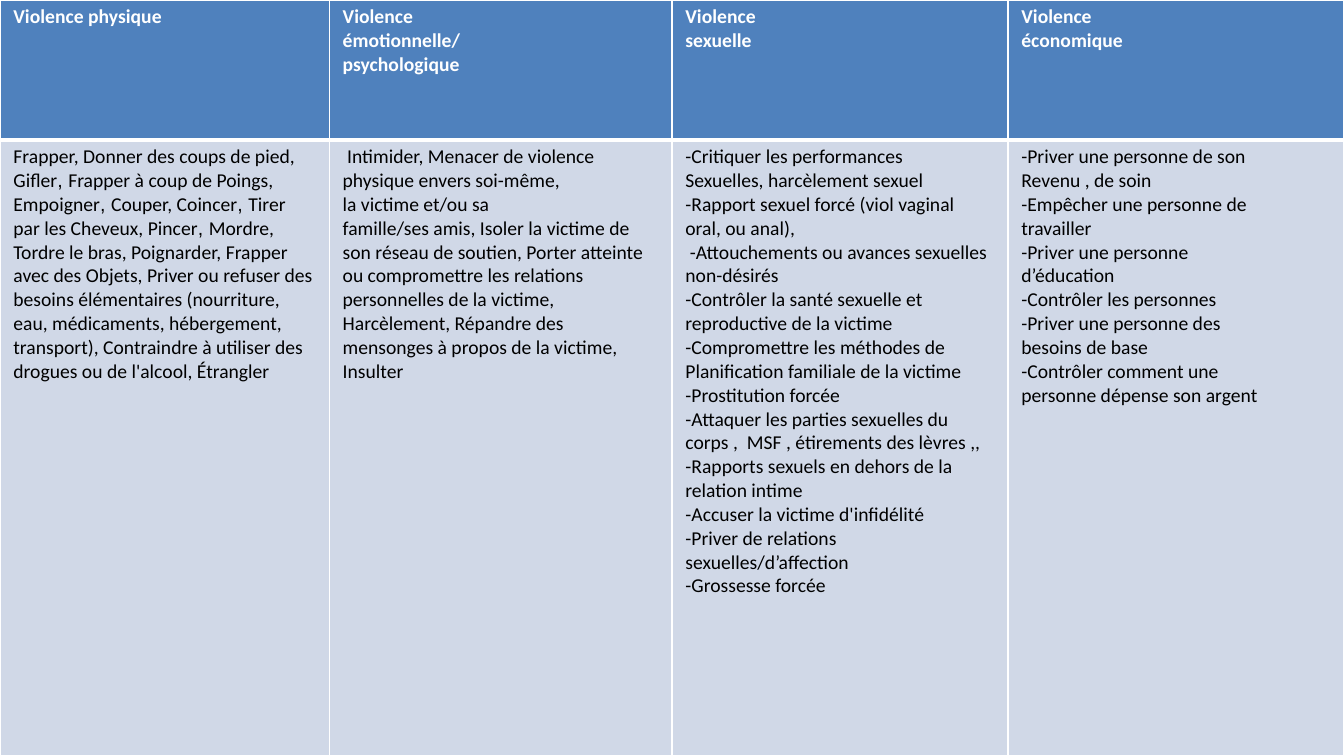
from lxml.etree import SubElement
from pptx import Presentation
from pptx.dml.color import RGBColor
from pptx.oxml.ns import qn
from pptx.util import Pt

HEADER_BLUE = RGBColor(0x4F, 0x81, 0xBD)
BODY_BLUE = RGBColor(0xD0, 0xD8, 0xE7)
WHITE = RGBColor(0xFF, 0xFF, 0xFF)
BLACK = RGBColor(0x00, 0x00, 0x00)

HEADERS = [
    ["Violence physique"],
    ["Violence", "émotionnelle/", "psychologique"],
    ["Violence", "sexuelle"],
    ["Violence", "économique"],
]
PHYSICAL = [
    (
        "Frapper, Donner des coups de pied, Gifler",
        "Frapper à coup de Poings, Empoigner",
        "Couper, Coincer",
        "Tirer par les Cheveux, Pincer",
        "Mordre, Tordre le bras, Poignarder, Frapper avec des Objets, "
        "Priver ou refuser des besoins élémentaires (nourriture, eau, "
        "médicaments, hébergement, transport), Contraindre à utiliser des",
    ),
    "drogues ou de l'alcool, Étrangler",
]
EMOTIONAL = [
    " Intimider, Menacer de violence",
    "physique envers soi-même,",
    "la victime et/ou sa",
    "famille/ses amis, Isoler la victime de son réseau de soutien, Porter "
    "atteinte ou compromettre les relations personnelles de la victime, "
    "Harcèlement, Répandre des mensonges à propos de la victime, Insulter",
]
SEXUAL = [
    "-Critiquer les performances",
    "Sexuelles, harcèlement sexuel",
    "-Rapport sexuel forcé (viol vaginal oral, ou anal),",
    " -Attouchements ou avances sexuelles non-désirés",
    "-Contrôler la santé sexuelle et",
    "reproductive de la victime",
    "-Compromettre les méthodes de",
    "Planification familiale de la victime",
    "-Prostitution forcée",
    "-Attaquer les parties sexuelles du corps ,  MSF , étirements des lèvres ,,",
    "-Rapports sexuels en dehors de la",
    "relation intime",
    "-Accuser la victime d'infidélité",
    "-Priver de relations sexuelles/d’affection",
    "-Grossesse forcée",
]
ECONOMIC = [
    "-Priver une personne de son",
    "Revenu , de soin",
    "-Empêcher une personne de",
    "travailler",
    "-Priver une personne",
    "d’éducation",
    "-Contrôler les personnes",
    "-Priver une personne des",
    "besoins de base",
    "-Contrôler comment une",
    "personne dépense son argent",
]
THIN, THICK = 0.96, 3
ROWS = [
    (HEADERS, 100, dict(fill=HEADER_BLUE, color=WHITE, bold=True, top=THIN, bottom=THICK)),
    ([PHYSICAL, EMOTIONAL, SEXUAL, ECONOMIC], 440,
     dict(fill=BODY_BLUE, color=BLACK, bold=False, top=THICK, bottom=THIN)),
]
COLUMN_WIDTHS = [235.2, 244.8, 240, 240]


def add_run(paragraph, text, font_name, color, bold):
    run = paragraph.add_run()
    run.text = text
    run.font.name = font_name
    run.font.size = Pt(14)
    run.font.bold = bold
    run.font.color.rgb = color


def set_borders(cell, top, bottom):
    properties = cell._tc.get_or_add_tcPr()
    widths = {"a:lnL": THIN, "a:lnR": THIN, "a:lnT": top, "a:lnB": bottom}
    for tag, width in widths.items():
        line = SubElement(properties, qn(tag), w=str(Pt(width)))
        fill = SubElement(line, qn("a:solidFill"))
        SubElement(fill, qn("a:srgbClr"), val=str(WHITE))


def write_cell(cell, text, fill, color, bold, top, bottom):
    set_borders(cell, top, bottom)
    cell.fill.solid()
    cell.fill.fore_color.rgb = fill
    cell.margin_left = cell.margin_right = Pt(9.6)
    cell.margin_top = cell.margin_bottom = Pt(3.6)
    frame = cell.text_frame
    for index, content in enumerate(text):
        paragraph = frame.add_paragraph() if index else frame.paragraphs[0]
        pieces = (content,) if isinstance(content, str) else content
        for position, piece in enumerate(pieces):
            if position:
                add_run(paragraph, ", ", "Arial", color, bold)
            add_run(paragraph, piece, "Calibri", color, bold)


def main():
    presentation = Presentation()
    presentation.slide_width = Pt(sum(COLUMN_WIDTHS))
    presentation.slide_height = Pt(sum(height for _, height, _ in ROWS))
    slide = presentation.slides.add_slide(presentation.slide_layouts[6])
    table = slide.shapes.add_table(
        len(ROWS), len(COLUMN_WIDTHS), Pt(0), Pt(0),
        presentation.slide_width, presentation.slide_height,
    ).table
    for column, width in zip(table.columns, COLUMN_WIDTHS):
        column.width = Pt(width)
    for row, (texts, height, cell_format) in zip(table.rows, ROWS):
        row.height = Pt(height)
        for cell, text in zip(row.cells, texts):
            write_cell(cell, text, **cell_format)
    presentation.save("out.pptx")


if __name__ == "__main__":
    main()
